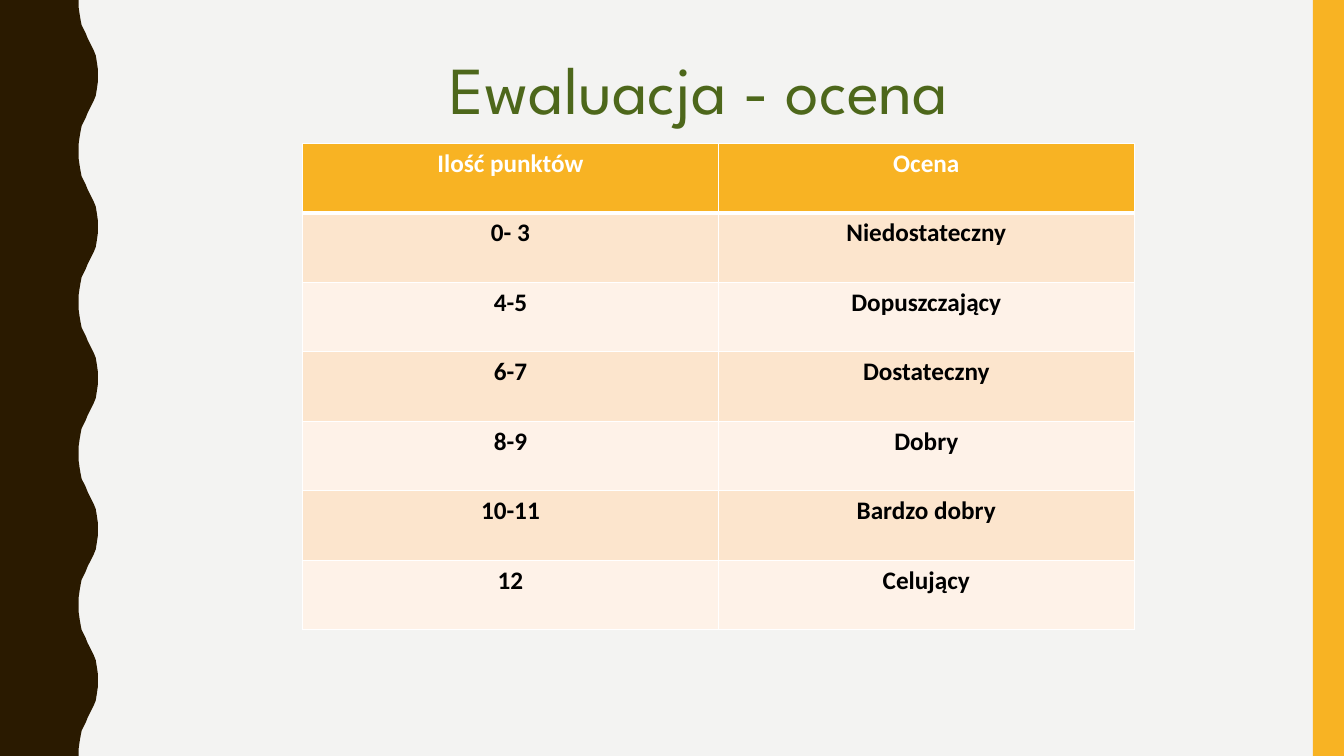
"""Build the slide that maps test points to grades."""
from lxml.etree import SubElement
from pptx import Presentation
from pptx.dml.color import RGBColor
from pptx.enum.shapes import MSO_SHAPE
from pptx.enum.text import MSO_ANCHOR, PP_ALIGN
from pptx.oxml.ns import qn
from pptx.util import Inches, Pt

BACKGROUND = RGBColor(0xF3, 0xF3, 0xF2)
BROWN = RGBColor(0x2A, 0x1A, 0x00)
AMBER = RGBColor(0xF8, 0xB3, 0x23)
GREEN = RGBColor(0x4D, 0x67, 0x1B)
PEACH = RGBColor(0xFC, 0xE5, 0xCD)
CREAM = RGBColor(0xFE, 0xF2, 0xE8)
WHITE = RGBColor(0xFF, 0xFF, 0xFF)
BLACK = RGBColor(0x00, 0x00, 0x00)

GRADES = [
    ("Ilość punktów", "Ocena"),
    ("0- 3", "Niedostateczny"),
    ("4-5", "Dopuszczający"),
    ("6-7", "Dostateczny"),
    ("8-9", "Dobry"),
    ("10-11", "Bardzo dobry"),
    ("12", "Celujący"),
]
RISING_WAVE = [
    (0.78, 0), (0.78, 0.07), (0.79, 0.14), (0.8, 0.2), (0.81, 0.25),
    (0.83, 0.29), (0.85, 0.33), (0.87, 0.38), (0.89, 0.42), (0.91, 0.46),
    (0.93, 0.5), (0.95, 0.55), (0.96, 0.61), (0.97, 0.68), (0.97, 0.75),
]
WAVE_LENGTH = 1.5


def paint(shape, color):
    shape.shadow.inherit = False
    shape.fill.solid()
    shape.fill.fore_color.rgb = color
    shape.line.fill.background()


def add_border(cell, side, width):
    line = SubElement(cell._tc.get_or_add_tcPr(), qn(f"a:{side}"), w=str(Pt(width)))
    fill = SubElement(line, qn("a:solidFill"))
    SubElement(fill, qn("a:srgbClr"), val=str(WHITE))


prs = Presentation()
prs.slide_width = Inches(13.33)
prs.slide_height = Inches(7.5)
slide = prs.slides.add_slide(prs.slide_layouts[5])
slide.background.fill.solid()
slide.background.fill.fore_color.rgb = BACKGROUND

falling_wave = [(x, WAVE_LENGTH - y) for x, y in RISING_WAVE[-2::-1]]
wave = [
    (Inches(x), Inches(y + n * WAVE_LENGTH))
    for n in range(5)
    for x, y in RISING_WAVE + falling_wave
]
outline = slide.shapes.build_freeform(0, 0)
outline.add_line_segments(wave + [(0, prs.slide_height)], close=True)
paint(outline.convert_to_shape(), BROWN)

right_band = slide.shapes.add_shape(
    MSO_SHAPE.RECTANGLE, Inches(13.02), 0, Inches(0.31), Inches(7.5)
)
paint(right_band, AMBER)

title = slide.shapes.title
title.left, title.top = Inches(1.37), Inches(0.42)
title.width, title.height = Inches(11.13), Inches(1)
title.text_frame.text = "Ewaluacja - ocena"
title.text_frame.vertical_anchor = MSO_ANCHOR.MIDDLE
heading = title.text_frame.paragraphs[0]
heading.alignment = PP_ALIGN.CENTER
heading.line_spacing = 0.9
heading.runs[0].font.name = "League Spartan"
heading.runs[0].font.size = Pt(48)
heading.runs[0].font.color.rgb = GREEN

grade_table = slide.shapes.add_table(
    len(GRADES), 2, Inches(3), Inches(1.42), Inches(8.25), Inches(4.83)
).table
for r, grade in enumerate(GRADES):
    for c, label in enumerate(grade):
        cell = grade_table.cell(r, c)
        for side in ("lnL", "lnR", "lnT", "lnB"):
            header_rule = (r, side) in ((0, "lnB"), (1, "lnT"))
            add_border(cell, side, 3 if header_rule else 1)
        cell.fill.solid()
        cell.fill.fore_color.rgb = AMBER if r == 0 else PEACH if r % 2 else CREAM
        cell.text_frame.text = label
        paragraph = cell.text_frame.paragraphs[0]
        paragraph.alignment = PP_ALIGN.CENTER
        font = paragraph.runs[0].font
        font.name = "Calibri"
        font.size = Pt(18)
        font.bold = True
        font.color.rgb = WHITE if r == 0 else BLACK

prs.save("out.pptx")
